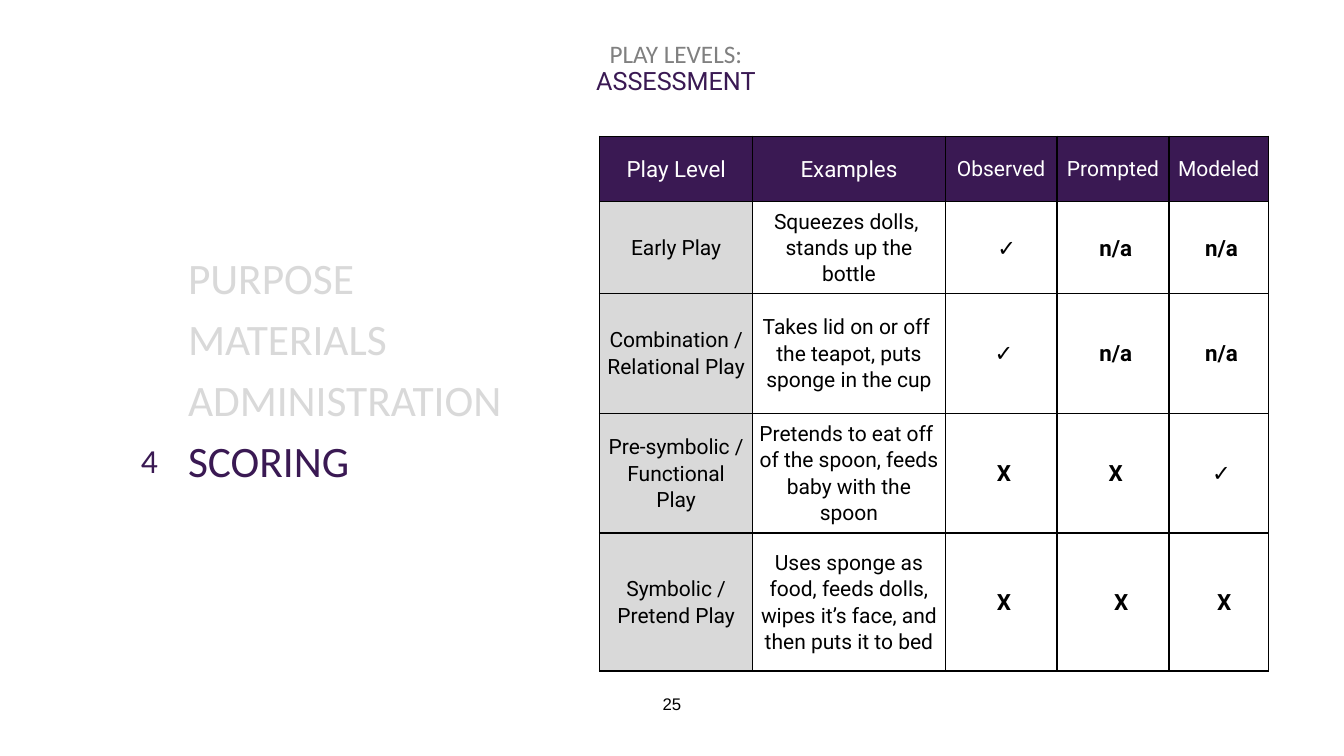
"""Build the play levels assessment scoring slide."""
from dataclasses import dataclass

from lxml.etree import SubElement
from pptx import Presentation
from pptx.dml.color import RGBColor
from pptx.enum.text import MSO_ANCHOR, PP_ALIGN
from pptx.oxml.ns import qn
from pptx.util import Cm, Pt

HEADERS = ["Play Level", "Examples", "Observed", "Prompted", "Modeled"]
LEVELS = [
    ("Early Play", "Squeezes dolls, \nstands up the bottle",
     [("✓", 2), ("n/a", 1), ("n/a", 1)]),
    ("Combination / Relational Play",
     "Takes lid on or off \nthe teapot, puts sponge in the cup",
     [("✓", 1), ("n/a", 1), ("n/a", 1)]),
    ("Pre-symbolic / Functional Play",
     "Pretends to eat off \nof the spoon, feeds baby with the spoon",
     [("X", 1), ("X", 1), ("✓", 1)]),
    ("Symbolic / Pretend Play",
     "Uses sponge as food, feeds dolls, wipes it’s face, and then puts it to bed",
     [("X", 1), ("X", 3), ("X", 2)]),
]
SECTIONS = ["PURPOSE", "MATERIALS", "ADMINISTRATION", "SCORING"]
CURRENT_SECTION = "SCORING"
SECTION_NUMBER = "4"
TITLE = ("PLAY LEVELS:", "ASSESSMENT")
PAGE_NUMBER = "25"

COLUMN_WIDTHS = [3.86, 4.85, 2.82, 2.82, 2.51]
ROW_HEIGHTS = [1.65, 2.31, 3.02, 3.02, 3.48]
TABLE_LEFT, TABLE_TOP = 15.11, 3.43
CELL_MARGIN = 0.15
MARK_INDENT = 0.14
SECTION_INDENT = 0.98


@dataclass(frozen=True)
class Theme:
    """Colours, fonts and type sizes."""
    purple: str = "3A1953"
    gray: str = "808080"
    pale: str = "D9D9D9"
    white: str = "FFFFFF"
    black: str = "000000"
    heading_font: str = "Calibri"
    table_font: str = "Roboto"
    number_font: str = "Arial"
    page_size: int = 12
    cell_size: int = 15
    mark_size: int = 16
    title_size: int = 18
    number_size: int = 24
    section_size: int = 31


THEME = Theme()


def add_span(para, text, font, size, color, bold=False):
    """Add text to a paragraph, breaking lines at newlines."""
    for index, line in enumerate(text.split("\n")):
        if index:
            para.add_line_break()
        span = para.add_run()
        span.text = line
        span.font.name = font
        span.font.size = Pt(size)
        span.font.bold = bold
        span.font.color.rgb = RGBColor.from_string(color)


def add_box(page, left, top, width, height, anchor=MSO_ANCHOR.TOP):
    """Add a wrapping text box and return its text frame."""
    box = page.shapes.add_textbox(Cm(left), Cm(top), Cm(width), Cm(height))
    box.text_frame.word_wrap = True
    box.text_frame.vertical_anchor = anchor
    return box.text_frame


def indent(para, centimetres):
    """Set the left indent of a paragraph."""
    properties = para._p.get_or_add_pPr()
    properties.set("marL", str(int(Cm(centimetres))))
    properties.set("indent", "0")


def add_borders(cell):
    """Draw a thin line on every side of a cell."""
    properties = cell._tc.get_or_add_tcPr()
    for index, side in enumerate(("a:lnL", "a:lnR", "a:lnT", "a:lnB")):
        line = properties.makeelement(qn(side), {"w": str(int(Pt(1)))})
        properties.insert(index, line)
        fill = SubElement(line, qn("a:solidFill"))
        SubElement(fill, qn("a:srgbClr"), val=THEME.black)


def fill_cell(cell, text, fill, color, size, bold=False, shift=0):
    """Write and style one table cell."""
    cell.margin_left = cell.margin_right = Cm(CELL_MARGIN)
    cell.margin_top = cell.margin_bottom = Cm(CELL_MARGIN)
    cell.vertical_anchor = MSO_ANCHOR.MIDDLE
    cell.fill.solid()
    cell.fill.fore_color.rgb = RGBColor.from_string(fill)
    para = cell.text_frame.paragraphs[0]
    para.alignment = PP_ALIGN.CENTER
    para.line_spacing = 1.07
    indent(para, shift * MARK_INDENT)
    add_span(para, text, THEME.table_font, size, color, bold)
    add_borders(cell)


def add_levels_table(page):
    """Add the table of play levels and their scores."""
    frame = page.shapes.add_table(
        len(ROW_HEIGHTS), len(COLUMN_WIDTHS), Cm(TABLE_LEFT), Cm(TABLE_TOP),
        Cm(sum(COLUMN_WIDTHS)), Cm(sum(ROW_HEIGHTS)))
    table = frame.table
    table.first_row = table.horz_banding = False
    for column, width in zip(table.columns, COLUMN_WIDTHS):
        column.width = Cm(width)
    for row, height in zip(table.rows, ROW_HEIGHTS):
        row.height = Cm(height)
    for index, header in enumerate(HEADERS):
        size = THEME.mark_size if index < 2 else THEME.cell_size
        fill_cell(table.cell(0, index), header, THEME.purple, THEME.white, size)
    for row, (level, example, marks) in enumerate(LEVELS, 1):
        fill_cell(table.cell(row, 0), level, THEME.pale, THEME.black, THEME.cell_size)
        fill_cell(table.cell(row, 1), example, THEME.white, THEME.black, THEME.cell_size)
        for column, (mark, shift) in enumerate(marks, 2):
            fill_cell(table.cell(row, column), mark, THEME.white, THEME.black,
                      THEME.mark_size, True, shift)


def add_headings(page):
    """Add the title and the page number."""
    para = add_box(page, 0, 16.84, 33.87, 1.78, MSO_ANCHOR.MIDDLE).paragraphs[0]
    para.alignment = PP_ALIGN.CENTER
    add_span(para, PAGE_NUMBER, THEME.number_font, THEME.page_size, THEME.black)

    para = add_box(page, 0.1, 0.03, 33.87, 3.4, MSO_ANCHOR.MIDDLE).paragraphs[0]
    para.alignment = PP_ALIGN.CENTER
    para.line_spacing = 0.9
    topic, subject = TITLE
    add_span(para, topic, THEME.heading_font, THEME.title_size, THEME.gray)
    para.add_line_break()
    add_span(para, subject, THEME.table_font, THEME.title_size, THEME.purple)


def add_sections(page):
    """Add the section list with the current section highlighted."""
    para = add_box(page, 3.3, 10.95, 1.32, 1.27).paragraphs[0]
    add_span(para, SECTION_NUMBER, THEME.heading_font, THEME.number_size, THEME.purple)

    frame = add_box(page, 3.51, 6.35, 11.61, 10.11)
    for index, section in enumerate(SECTIONS):
        para = frame.add_paragraph() if index else frame.paragraphs[0]
        para.line_spacing = 0.9
        para.space_before = Pt(10)
        indent(para, SECTION_INDENT)
        color = THEME.purple if section == CURRENT_SECTION else THEME.pale
        add_span(para, section, THEME.heading_font, THEME.section_size, color)


def main():
    """Create the deck and save it."""
    deck = Presentation()
    deck.slide_width, deck.slide_height = Cm(33.87), Cm(19.05)
    page = deck.slides.add_slide(deck.slide_layouts[6])
    add_levels_table(page)
    add_headings(page)
    add_sections(page)
    deck.save("out.pptx")


if __name__ == "__main__":
    main()
